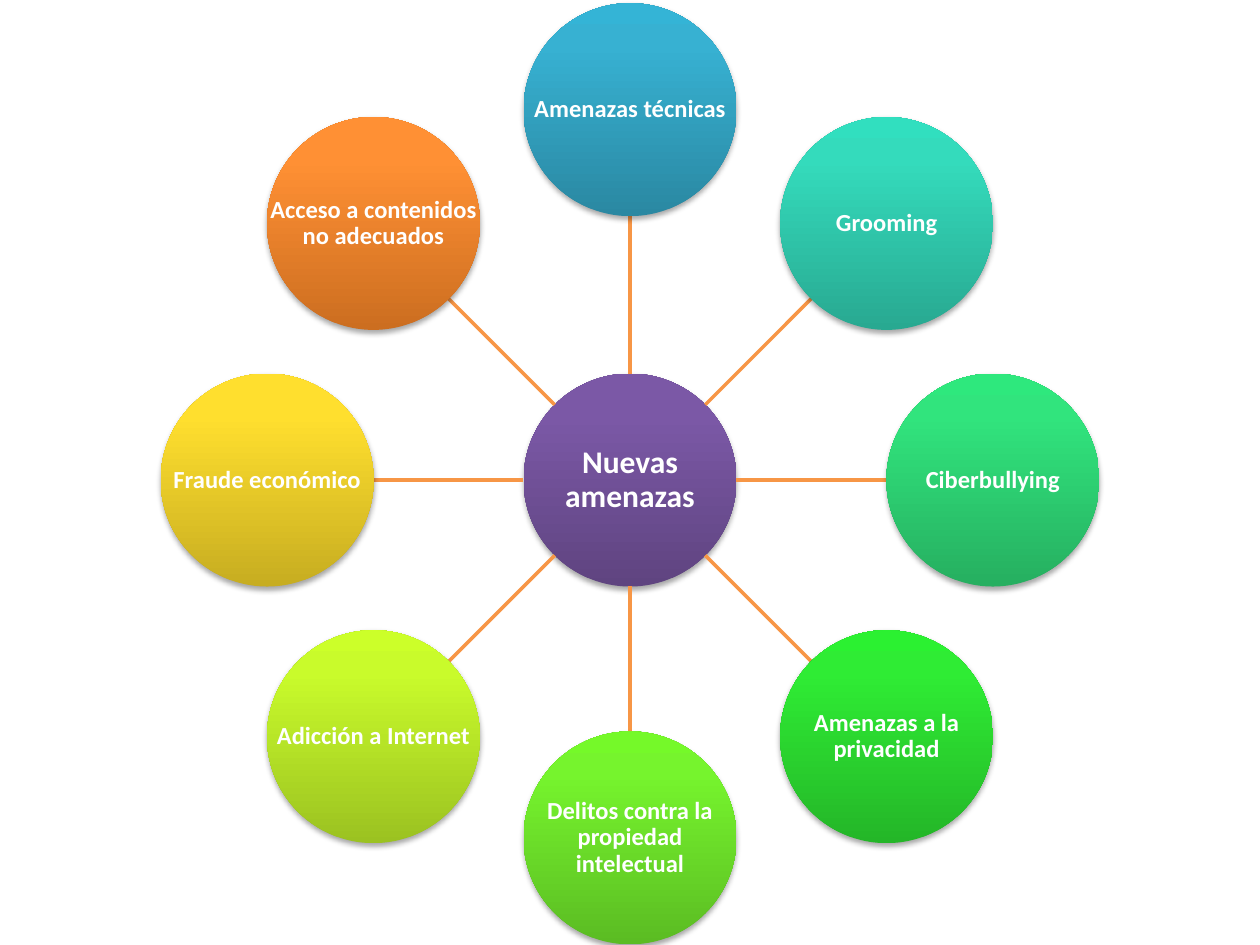
"""Build a radial diagram of new online threats around a central hub."""
from math import cos, radians, sin

from lxml.etree import SubElement
from pptx import Presentation
from pptx.dml.color import RGBColor
from pptx.enum.shapes import MSO_CONNECTOR as Connector, MSO_SHAPE as Shape
from pptx.enum.text import MSO_ANCHOR as Anchor, PP_ALIGN as Align
from pptx.oxml.ns import qn
from pptx.util import Inches, Pt

WHITE = RGBColor(0xFF, 0xFF, 0xFF)
ORANGE = RGBColor(0xF7, 0x96, 0x46)
BLACK = RGBColor(0, 0, 0)


def shades(*codes):
    return [RGBColor.from_string(code) for code in codes]


HUB = ("Nuevas amenazas", shades("5F4480", "7B58A6", "7C57A8"))
THREATS = [
    ("Amenazas técnicas", 2.94, shades("2A88A2", "37B1D2", "34B4D6")),
    ("Grooming", 2.88, shades("28A991", "34DBBC", "31DFBF")),
    ("Ciberbullying", 2.88, shades("26AF60", "31E47D", "2EE87D")),
    ("Amenazas a la privacidad", 2.88, shades("24B628", "2FEC34", "2BF131")),
    ("Delitos contra la propiedad intelectual", 2.84, shades("5BBC23", "76F42D", "75F929")),
    ("Adicción a Internet", 2.88, shades("9BC221", "C9FB2B", "CCFF29")),
    ("Fraude económico", 2.88, shades("C7AD21", "FFDF2E", "FFDF2F")),
    ("Acceso a contenidos no adecuados", 2.88, shades("CC6E20", "FF9034", "FF9136")),
]
STOPS = (0, 80, 100)
CENTER_X, CENTER_Y = 5, 3.81
DIAMETER = 1.69
RADIUS = DIAMETER / 2


def add_color(parent, color):
    return SubElement(parent, qn("a:srgbClr"), val=str(color))


def fill_gradient(shape, colors):
    shape.fill.gradient()
    gradient = shape._element.spPr.find(qn("a:gradFill"))
    for child in list(gradient):
        gradient.remove(child)
    stops = SubElement(gradient, qn("a:gsLst"))
    for position, color in zip(STOPS, colors):
        add_color(SubElement(stops, qn("a:gs"), pos=str(position * 1000)), color)
    SubElement(gradient, qn("a:lin"), ang=str(270 * 60000), scaled="0")


def add_shadow(shape):
    shape.shadow.inherit = False
    effects = shape._element.spPr.find(qn("a:effectLst"))
    shadow = SubElement(effects, qn("a:outerShdw"), blurRad=str(Pt(3.1)), dist=str(Pt(1.8)),
                        dir=str(90 * 60000), rotWithShape="0")
    SubElement(add_color(shadow, BLACK), qn("a:alpha"), val="35000")


def add_text(page, text, area, size=14, color=WHITE, font="Calibri"):
    box = page.shapes.add_textbox(*area)
    frame = box.text_frame
    frame.word_wrap = True
    frame.vertical_anchor = Anchor.MIDDLE
    frame.margin_left = frame.margin_right = Inches(0.01)
    frame.margin_top = frame.margin_bottom = Inches(0.01)
    para = frame.paragraphs[0]
    para.alignment = Align.CENTER
    para.line_spacing = 0.9
    span = para.add_run()
    span.text = text
    span.font.name, span.font.size, span.font.bold = font, Pt(size), True
    span.font.color.rgb = color


def add_circle(page, text, x, y, colors, size=14):
    area = [Inches(value) for value in (x - RADIUS, y - RADIUS, DIAMETER, DIAMETER)]
    circle = page.shapes.add_shape(Shape.OVAL, *area)
    fill_gradient(circle, colors)
    circle.line.fill.background()
    add_shadow(circle)
    add_text(page, text, area, size=size)


def point_at(angle, distance):
    return CENTER_X + distance * sin(angle), CENTER_Y - distance * cos(angle)


def add_spoke(page, angle, reach):
    ends = point_at(angle, RADIUS) + point_at(angle, reach - RADIUS)
    spoke = page.shapes.add_connector(Connector.STRAIGHT, *[Inches(end) for end in ends])
    spoke.line.color.rgb = ORANGE
    spoke.line.width = Pt(2)
    SubElement(spoke._element.spPr, qn("a:effectLst"))


def main():
    deck = Presentation()
    deck.slide_width, deck.slide_height = Inches(10), Inches(7.5)
    page = deck.slides.add_slide(deck.slide_layouts[6])
    hub_text, hub_colors = HUB
    add_circle(page, hub_text, CENTER_X, CENTER_Y, hub_colors, size=18)
    for index, (text, reach, colors) in enumerate(THREATS):
        angle = radians(index * 360 / len(THREATS))
        add_spoke(page, angle, reach)
        add_circle(page, text, *point_at(angle, reach), colors)
    deck.save("out.pptx")


if __name__ == "__main__":
    main()
